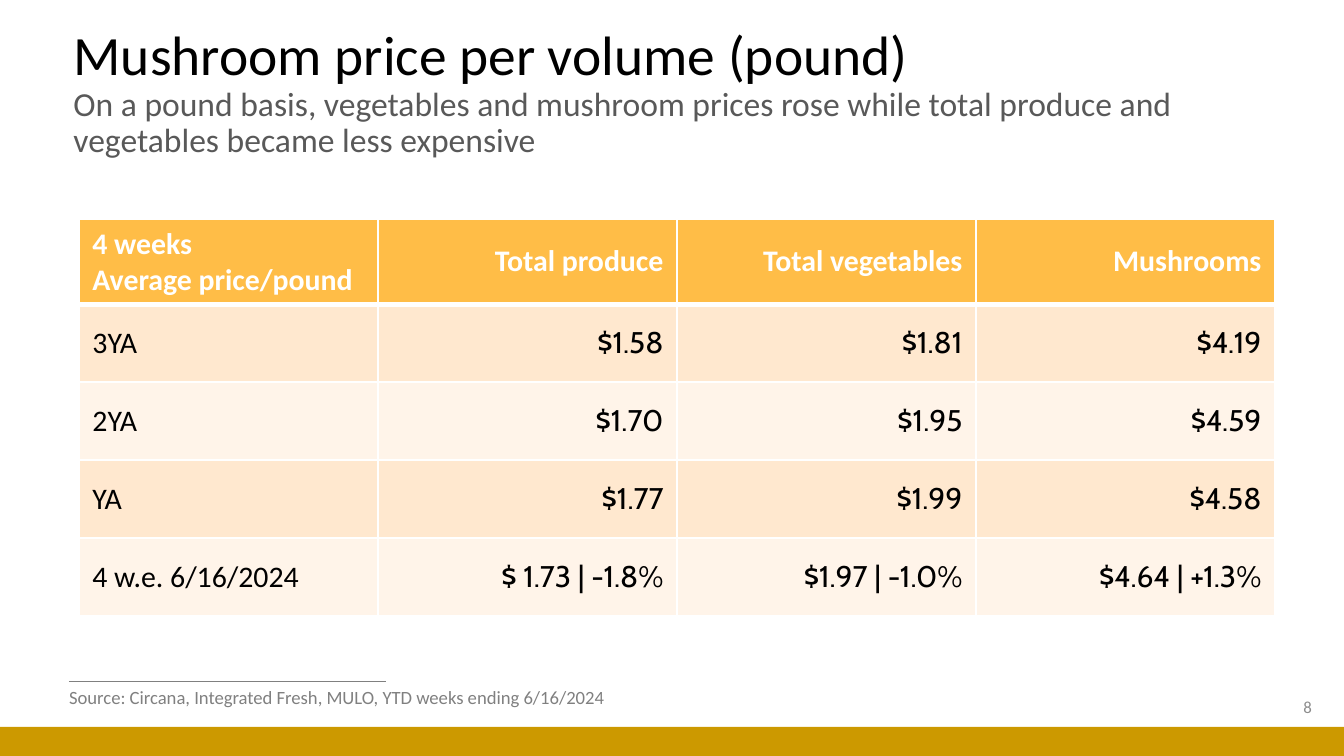
"""Build the mushroom price per pound slide."""
import lxml.etree
import pptx
import pptx.dml.color
import pptx.enum.shapes
import pptx.enum.text
import pptx.oxml.ns
import pptx.util

RGBColor = pptx.dml.color.RGBColor
ALIGN = pptx.enum.text.PP_ALIGN
MIDDLE = pptx.enum.text.MSO_ANCHOR.MIDDLE
qn = pptx.oxml.ns.qn

SCALE = 9144000 / 1344
BLACK = RGBColor(0x00, 0x00, 0x00)
WHITE = RGBColor(0xFF, 0xFF, 0xFF)
SUBTITLE_GREY = RGBColor(0x59, 0x59, 0x59)
SOURCE_GREY = RGBColor(0x80, 0x80, 0x80)
NUMBER_GREY = RGBColor(0x8C, 0x8C, 0x8C)
GOLD = RGBColor(0xCC, 0x99, 0x00)
AMBER = RGBColor(0xFF, 0xBD, 0x47)
PEACH = RGBColor(0xFF, 0xE8, 0xCF)
CREAM = RGBColor(0xFF, 0xF4, 0xE9)

PRICES = [
    ["4 weeks\nAverage price/pound", "Total produce", "Total vegetables", "Mushrooms"],
    ["3YA", "$1.58", "$1.81", "$4.19"],
    ["2YA", "$1.70", "$1.95", "$4.59"],
    ["YA", "$1.77", "$1.99", "$4.58"],
    ["4 w.e. 6/16/2024", "$ 1.73 | -1.8%", "$1.97 | -1.0%", "$4.64 | +1.3%"],
]


def px(*lengths):
    """Turn px lengths into a list of EMU."""
    return [pptx.util.Emu(round(length * SCALE)) for length in lengths]


def apply(target, values):
    """Set each attribute named in values on target."""
    for name, value in values.items():
        setattr(target, name, value)


def style_font(font, size, color, name="Calibri", bold=False):
    """Format a font."""
    apply(font, {"size": pptx.util.Pt(size), "name": name, "bold": bold})
    font.color.rgb = color


def fill_title(title):
    """Write the headline and its subtitle into the title placeholder."""
    apply(title, dict(zip(("left", "top", "width", "height"), px(60, 30, 1175, 128))))
    apply(title.text_frame, {
        "word_wrap": True,
        "vertical_anchor": MIDDLE,
        "auto_size": pptx.enum.text.MSO_AUTO_SIZE.NONE,
    })
    heading = title.text_frame.paragraphs[0]
    apply(heading, {"alignment": ALIGN.LEFT, "line_spacing": 0.9})
    headline = heading.add_run()
    headline.text = "Mushroom price per volume (pound)"
    style_font(headline.font, 29.7, BLACK)
    heading.add_line_break()
    subtitle = heading.add_run()
    subtitle.text = ("On a pound basis, vegetables and mushroom prices rose while "
                     "total produce and vegetables became less expensive")
    style_font(subtitle.font, 18, SUBTITLE_GREY)


def add_label(slide, box, text, size, color, frame_format, alignment=ALIGN.LEFT):
    """Add a one-line text box."""
    frame = slide.shapes.add_textbox(*px(*box)).text_frame
    apply(frame, frame_format)
    line = frame.paragraphs[0]
    line.text = text
    line.alignment = alignment
    style_font(line.runs[0].font, size, color)


def add_footer_bar(slide):
    """Add the gold bar along the bottom edge."""
    bar = slide.shapes.add_shape(
        pptx.enum.shapes.MSO_SHAPE.RECTANGLE, *px(0, 727, 1344, 29))
    bar.shadow.inherit = False
    bar.fill.solid()
    bar.fill.fore_color.rgb = GOLD
    bar.line.fill.background()


def add_source_rule(slide):
    """Add the thin line above the source."""
    rule = slide.shapes.add_connector(
        pptx.enum.shapes.MSO_CONNECTOR.STRAIGHT, *px(69, 682, 386, 682))
    rule.line.color.rgb = SOURCE_GREY
    rule.line.width = pptx.util.Pt(0.5)
    lxml.etree.SubElement(rule._element.spPr, qn("a:effectLst"))


def set_borders(cell, widths):
    """Draw white borders with the given point widths by side."""
    properties = cell._tc.get_or_add_tcPr()
    for side, width in widths.items():
        border = lxml.etree.SubElement(
            properties, qn(f"a:ln{side}"), w=str(pptx.util.Pt(width)))
        solid = lxml.etree.SubElement(border, qn("a:solidFill"))
        lxml.etree.SubElement(solid, qn("a:srgbClr"), val=str(WHITE))


def format_cell(cell, row, column):
    """Format a cell by its place in the table."""
    header = row == 0
    set_borders(cell, {"L": 1, "R": 1, "T": 3 if row == 1 else 1, "B": 3 if header else 1})
    cell.vertical_anchor = MIDDLE
    cell.fill.solid()
    cell.fill.fore_color.rgb = AMBER if header else (CREAM, PEACH)[row % 2]
    for paragraph in cell.text_frame.paragraphs:
        paragraph.alignment = ALIGN.RIGHT if column else ALIGN.LEFT
        for run in paragraph.runs:
            style_font(run.font, 16, WHITE if header else BLACK,
                       "Cabin" if row and column else "Calibri", header)


def add_price_table(slide):
    """Add the table of average prices."""
    table = slide.shapes.add_table(
        len(PRICES), len(PRICES[0]), *px(79, 219, 1196, 392)).table
    apply(table, {"first_row": True, "horz_banding": False})
    for row, values in enumerate(PRICES):
        table.rows[row].height = px(78 if row else 80)[0]
        for column, value in enumerate(values):
            cell = table.cell(row, column)
            cell.text = value
            format_cell(cell, row, column)


def main():
    """Build and save the slide."""
    deck = pptx.Presentation()
    deck.slide_width, deck.slide_height = px(1344, 756)
    slide = deck.slides.add_slide(deck.slide_layouts[5])
    add_source_rule(slide)
    add_footer_bar(slide)
    fill_title(slide.shapes.title)
    add_label(slide, (1023, 687, 302, 40), "8", 9, NUMBER_GREY,
              {"word_wrap": True, "vertical_anchor": MIDDLE}, ALIGN.RIGHT)
    add_price_table(slide)
    add_label(slide, (56, 679, 579, 36),
              "Source: Circana, Integrated Fresh, MULO, YTD weeks ending 6/16/2024",
              10, SOURCE_GREY,
              {"word_wrap": False,
               "auto_size": pptx.enum.text.MSO_AUTO_SIZE.SHAPE_TO_FIT_TEXT})
    deck.save("out.pptx")


if __name__ == "__main__":
    main()
